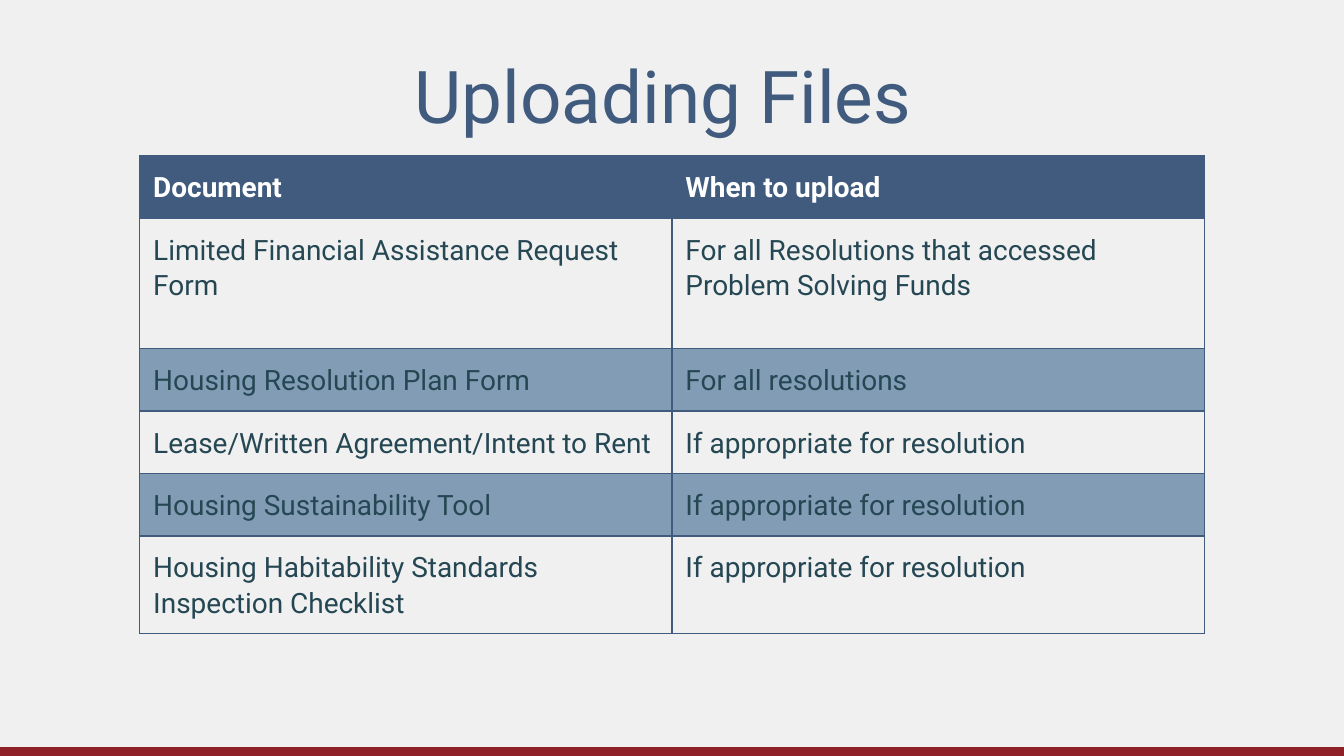
"""Build the Uploading Files slide with its table of documents."""
from dataclasses import dataclass

from lxml import etree
from pptx import Presentation
from pptx.dml.color import RGBColor
from pptx.enum.shapes import MSO_SHAPE
from pptx.enum.text import MSO_ANCHOR, MSO_AUTO_SIZE, PP_ALIGN
from pptx.oxml.ns import qn
from pptx.util import Inches, Pt

RECTANGLE = MSO_SHAPE.RECTANGLE
TOP, MIDDLE = MSO_ANCHOR.TOP, MSO_ANCHOR.MIDDLE
NO_AUTOFIT = MSO_AUTO_SIZE.NONE
CENTER = PP_ALIGN.CENTER


@dataclass(frozen=True)
class Theme:
    font: str = "Roboto"
    title_size: float = 39
    table_size: float = 15
    border_width: float = 0.75
    background: str = "F0F0F0"
    navy: str = "405B7D"
    band: str = "839CB5"
    text: str = "254753"
    white: str = "FFFFFF"
    footer: str = "902027"


@dataclass(frozen=True)
class DocumentRow:
    document: str
    when: str
    height: float = 0.42


THEME = Theme()
ROWS = [
    DocumentRow("Document", "When to upload"),
    DocumentRow("Limited Financial Assistance Request Form",
                "For all Resolutions that accessed Problem Solving Funds", 0.97),
    DocumentRow("Housing Resolution Plan Form", "For all resolutions"),
    DocumentRow("Lease/Written Agreement/Intent to Rent", "If appropriate for resolution"),
    DocumentRow("Housing Sustainability Tool", "If appropriate for resolution"),
    DocumentRow("Housing Habitability Standards Inspection Checklist",
                "If appropriate for resolution"),
]


def set_font(p, size: float, color: str, bold: bool = False) -> None:
    p.font.name = THEME.font
    p.font.size = Pt(size)
    p.font.bold = bold
    p.font.color.rgb = RGBColor.from_string(color)


def set_fill(fill, color: str) -> None:
    fill.solid()
    fill.fore_color.rgb = RGBColor.from_string(color)


def add_borders(cell) -> None:
    tc_pr = cell._tc.get_or_add_tcPr()
    for side in ("a:lnL", "a:lnR", "a:lnT", "a:lnB"):
        ln = etree.SubElement(tc_pr, qn(side), w=str(Pt(THEME.border_width)))
        fill = etree.SubElement(ln, qn("a:solidFill"))
        etree.SubElement(fill, qn("a:srgbClr"), val=THEME.navy)


def format_cell(cell, text: str, fill: str, color: str, bold: bool) -> None:
    cell.margin_left = cell.margin_right = Inches(0.1)
    cell.margin_top = cell.margin_bottom = Inches(0.1)
    cell.vertical_anchor = TOP
    add_borders(cell)
    set_fill(cell.fill, fill)
    p = cell.text_frame.paragraphs[0]
    p.text = text
    p.line_spacing = 1.08
    set_font(p, THEME.table_size, color, bold)


def add_footer_bar(slide) -> None:
    sp = slide.shapes.add_shape(RECTANGLE, 0, Inches(5.56), Inches(10), Inches(0.08))
    sp.shadow.inherit = False
    set_fill(sp.fill, THEME.footer)
    sp.line.fill.background()


def format_title(title, text: str) -> None:
    title.left, title.top = Inches(0.5), Inches(0.23)
    title.width, title.height = Inches(9), Inches(0.94)
    tf = title.text_frame
    tf.auto_size = NO_AUTOFIT
    tf.word_wrap = True
    tf.vertical_anchor = MIDDLE
    tf.margin_left = tf.margin_right = Inches(0.06)
    tf.margin_top = tf.margin_bottom = Inches(0.06)
    p = tf.paragraphs[0]
    p.text = text
    p.alignment = CENTER
    set_font(p, THEME.title_size, THEME.navy)


def add_document_table(slide, rows: list[DocumentRow]) -> None:
    height = sum(row.height for row in rows)
    table = slide.shapes.add_table(len(rows), 2, Inches(1.04), Inches(1.16),
                                   Inches(7.92), Inches(height)).table
    for column in table.columns:
        column.width = Inches(3.96)
    for i, row in enumerate(rows):
        table.rows[i].height = Inches(row.height)
        header = i == 0
        fill = THEME.navy if header else (THEME.background if i % 2 else THEME.band)
        color = THEME.white if header else THEME.text
        for j, text in enumerate((row.document, row.when)):
            format_cell(table.cell(i, j), text, fill, color, header)


def main() -> None:
    prs = Presentation()
    prs.slide_width = Inches(10)
    prs.slide_height = prs.slide_width * 9 // 16
    slide = prs.slides.add_slide(prs.slide_layouts[5])
    set_fill(slide.background.fill, THEME.background)
    add_footer_bar(slide)
    format_title(slide.shapes.title, "Uploading Files ")
    add_document_table(slide, ROWS)
    prs.save("out.pptx")


if __name__ == "__main__":
    main()
